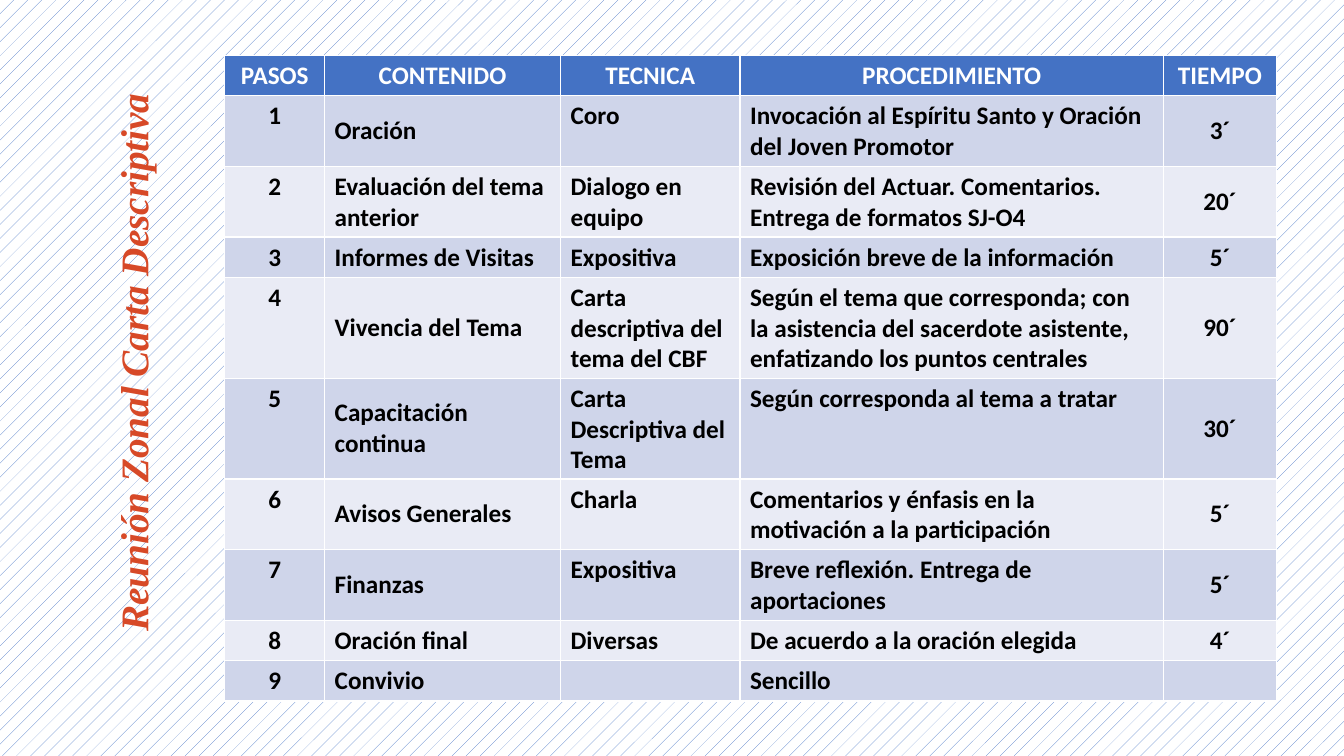
from typing import NamedTuple

from pptx import Presentation
from pptx.dml.color import RGBColor
from pptx.enum.dml import MSO_PATTERN
from pptx.enum.text import MSO_ANCHOR, MSO_AUTO_SIZE, PP_ALIGN
from pptx.slide import Slide
from pptx.util import Inches, Pt

BLUE, WHITE, BLACK, RED = "4472C4", "FFFFFF", "000000", "D74927"
BANDS = ("CFD5EA", "E9EBF5")


class Column(NamedTuple):
    heading: str
    width: float
    align: PP_ALIGN = PP_ALIGN.LEFT
    anchor: MSO_ANCHOR = MSO_ANCHOR.TOP


class Step(NamedTuple):
    content: str
    technique: str
    procedure: str
    duration: str
    height: float


COLUMNS = [
    Column("PASOS", 0.99, align=PP_ALIGN.CENTER),
    Column("CONTENIDO", 2.34, anchor=MSO_ANCHOR.MIDDLE),
    Column("TECNICA", 1.78),
    Column("PROCEDIMIENTO", 4.2),
    Column("TIEMPO", 1.12, PP_ALIGN.CENTER, MSO_ANCHOR.MIDDLE),
]
HEADER_HEIGHT = 0.37
STEPS = [
    Step("Oración", "Coro",
         "Invocación al Espíritu Santo y Oración del Joven Promotor", "3´", 0.64),
    Step("Evaluación del tema anterior", "Dialogo en equipo",
         "Revisión del Actuar. Comentarios. Entrega de formatos SJ-O4", "20´", 0.64),
    Step("Informes de Visitas", "Expositiva",
         "Exposición breve de la información", "5´", 0.37),
    Step("Vivencia del Tema", "Carta descriptiva del tema del CBF",
         "Según el tema que corresponda; con la asistencia del sacerdote asistente, "
         "enfatizando los puntos centrales", "90´", 0.91),
    Step("Capacitación continua", "Carta Descriptiva del Tema",
         "Según corresponda al tema a tratar", "30´", 0.91),
    Step("Avisos Generales", "Charla",
         "Comentarios y énfasis en la motivación a la participación", "5´", 0.64),
    Step("Finanzas", "Expositiva",
         "Breve reflexión. Entrega de aportaciones", "5´", 0.64),
    Step("Oración final", "Diversas", "De acuerdo a la oración elegida", "4´", 0.37),
    Step("Convivio", "", "Sencillo", "", 0.37),
]


def rgb(value: str) -> RGBColor:
    return RGBColor.from_string(value)


def style_paragraph(paragraph, font_name: str, size: float, color: str) -> None:
    font = paragraph.font
    font.name, font.size, font.bold = font_name, Pt(size), True
    font.color.rgb = rgb(color)


def fill_cell(cell, text: str, fill: str, color: str,
              align: PP_ALIGN, anchor: MSO_ANCHOR) -> None:
    cell.fill.solid()
    cell.fill.fore_color.rgb = rgb(fill)
    cell.vertical_anchor = anchor
    cell.text = text
    paragraph = cell.text_frame.paragraphs[0]
    paragraph.alignment = align
    style_paragraph(paragraph, "Calibri", 18, color)


def add_background(slide: Slide) -> None:
    fill = slide.background.fill
    fill.patterned()
    fill.pattern = MSO_PATTERN.PERCENT_5
    fill.fore_color.rgb = rgb(BLUE)
    fill.back_color.rgb = rgb(WHITE)


def add_vertical_title(slide: Slide, text: str) -> None:
    title = slide.shapes.add_textbox(Inches(-1.96), Inches(2.8), Inches(6.56), Inches(0.57))
    title.rotation = 270
    frame = title.text_frame
    frame.word_wrap = True
    frame.auto_size = MSO_AUTO_SIZE.SHAPE_TO_FIT_TEXT
    frame.text = text
    paragraph = frame.paragraphs[0]
    style_paragraph(paragraph, "Times New Roman", 28, RED)
    paragraph.font.italic = True


def add_steps_table(slide: Slide) -> None:
    height = Inches(6.4)
    graphic_frame = slide.shapes.add_table(
        len(STEPS) + 1, len(COLUMNS), Inches(2.23), Inches(0.55), Inches(10.43), height)
    table = graphic_frame.table

    table.rows[0].height = Inches(HEADER_HEIGHT)
    for index, column in enumerate(COLUMNS):
        table.columns[index].width = Inches(column.width)
        fill_cell(table.cell(0, index), column.heading, BLUE, WHITE,
                  PP_ALIGN.CENTER, MSO_ANCHOR.TOP)

    for number, step in enumerate(STEPS, start=1):
        table.rows[number].height = Inches(step.height)
        texts = (str(number), step.content, step.technique, step.procedure, step.duration)
        for index, (column, text) in enumerate(zip(COLUMNS, texts)):
            fill_cell(table.cell(number, index), text, BANDS[(number - 1) % 2], BLACK,
                      column.align, column.anchor)

    # Row heights reset the frame height, so it is set last.
    graphic_frame.height = height


def main() -> None:
    presentation = Presentation()
    presentation.slide_width = Inches(13.33)
    presentation.slide_height = Inches(7.5)
    slide = presentation.slides.add_slide(presentation.slide_layouts[6])
    add_background(slide)
    add_vertical_title(slide, "Reunión Zonal Carta Descriptiva")
    add_steps_table(slide)
    presentation.save("out.pptx")


if __name__ == "__main__":
    main()
